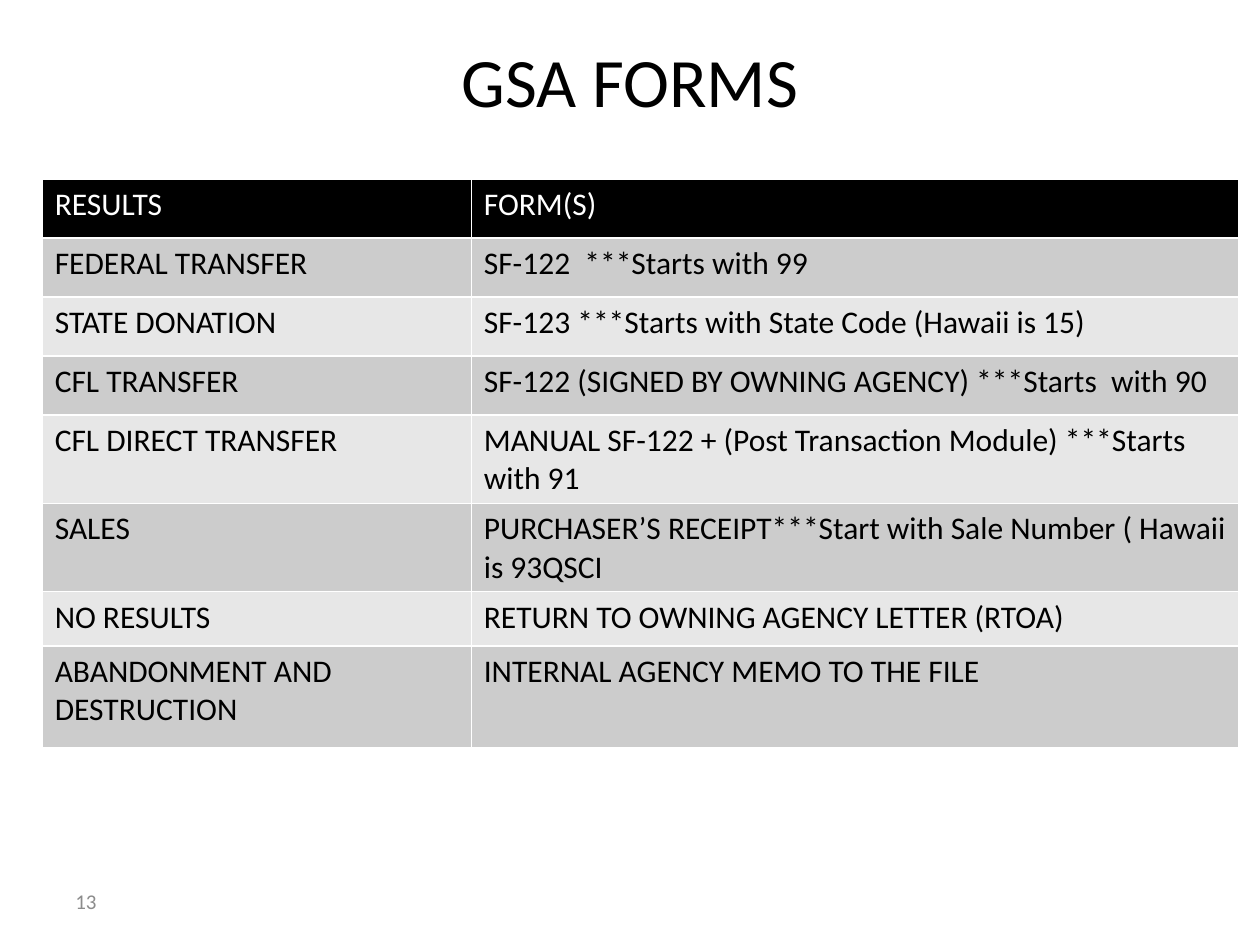
from lxml.etree import SubElement
from pptx import Presentation
from pptx.dml.color import RGBColor as RGB
from pptx.enum.text import MSO_ANCHOR as Anchor, PP_ALIGN as Align
from pptx.oxml.ns import qn
from pptx.util import Cm, Pt

FONT = "Calibri"
COLORS = {
    "text": "000000",
    "header": "000000",
    "header_text": "FFFFFF",
    "odd": "CCCCCC",
    "even": "E7E7E7",
    "border": "FFFFFF",
    "number": "8C8C8C",
}
TITLE = "GSA FORMS"
NUMBER = "13"
ROWS = [
    ("RESULTS", "FORM(S)"),
    ("FEDERAL TRANSFER", "SF-122  ***Starts with 99"),
    ("STATE DONATION", "SF-123 ***Starts with State Code (Hawaii is 15)"),
    ("CFL TRANSFER", "SF-122 (SIGNED BY OWNING AGENCY) ***Starts  with 90"),
    ("CFL DIRECT TRANSFER", "MANUAL SF-122 + (Post Transaction Module) ***Starts with 91"),
    ("SALES", "PURCHASER’S RECEIPT***Start with Sale Number ( Hawaii is 93QSCI"),
    ("NO RESULTS", "RETURN TO OWNING AGENCY LETTER (RTOA)"),
    ("ABANDONMENT AND DESTRUCTION", "INTERNAL AGENCY MEMO TO THE FILE"),
]
COL_WIDTHS = [8.65, 15.48]
ROW_HEIGHTS = [1.19, 1.19, 1.19, 1.19, 0.97, 1.19, 1.09, 2.05]


def add_run(p, text, size, color):
    r = p.add_run()
    r.text = text
    r.font.name = FONT
    r.font.size = Pt(size)
    r.font.color.rgb = RGB.from_string(COLORS[color])


def add_text(s, box, text, size, color, align):
    tf = s.shapes.add_textbox(*map(Cm, box)).text_frame
    tf.word_wrap = True
    tf.vertical_anchor = Anchor.MIDDLE
    p = tf.paragraphs[0]
    p.alignment = align
    add_run(p, text, size, color)


def set_borders(cell):
    pr = cell._tc.get_or_add_tcPr()
    for i, side in enumerate(("lnL", "lnR", "lnT", "lnB")):
        ln = SubElement(pr, qn(f"a:{side}"), w=str(Pt(1)))
        fill = SubElement(ln, qn("a:solidFill"))
        SubElement(fill, qn("a:srgbClr"), val=COLORS["border"])
        pr.insert(i, ln)


def add_forms_table(s):
    size = (len(ROWS), len(COL_WIDTHS))
    box = (0.85, 3.61, sum(COL_WIDTHS), sum(ROW_HEIGHTS))
    table = s.shapes.add_table(*size, *map(Cm, box)).table
    for col, width in zip(table.columns, COL_WIDTHS):
        col.width = Cm(width)
    for i, (row, height, texts) in enumerate(zip(table.rows, ROW_HEIGHTS, ROWS)):
        row.height = Cm(height)
        band = "header" if i == 0 else "odd" if i % 2 else "even"
        for cell, text in zip(row.cells, texts):
            cell.fill.solid()
            cell.fill.fore_color.rgb = RGB.from_string(COLORS[band])
            set_borders(cell)
            add_run(cell.text_frame.paragraphs[0], text, 18,
                    "text" if i else "header_text")
            cell.text_frame.paragraphs[0].runs[0].font.bold = False


def main():
    prs = Presentation()
    prs.slide_width, prs.slide_height = Cm(25.4), Cm(19.05)
    s = prs.slides.add_slide(prs.slide_layouts[6])
    add_text(s, (1.9, 0.84, 21.6, 1.52), TITLE, 39.6, "text", Align.CENTER)
    add_forms_table(s)
    add_text(s, (1.27, 17.65, 5.92, 1.02), NUMBER, 12, "number", Align.LEFT)
    prs.save("out.pptx")


if __name__ == "__main__":
    main()
